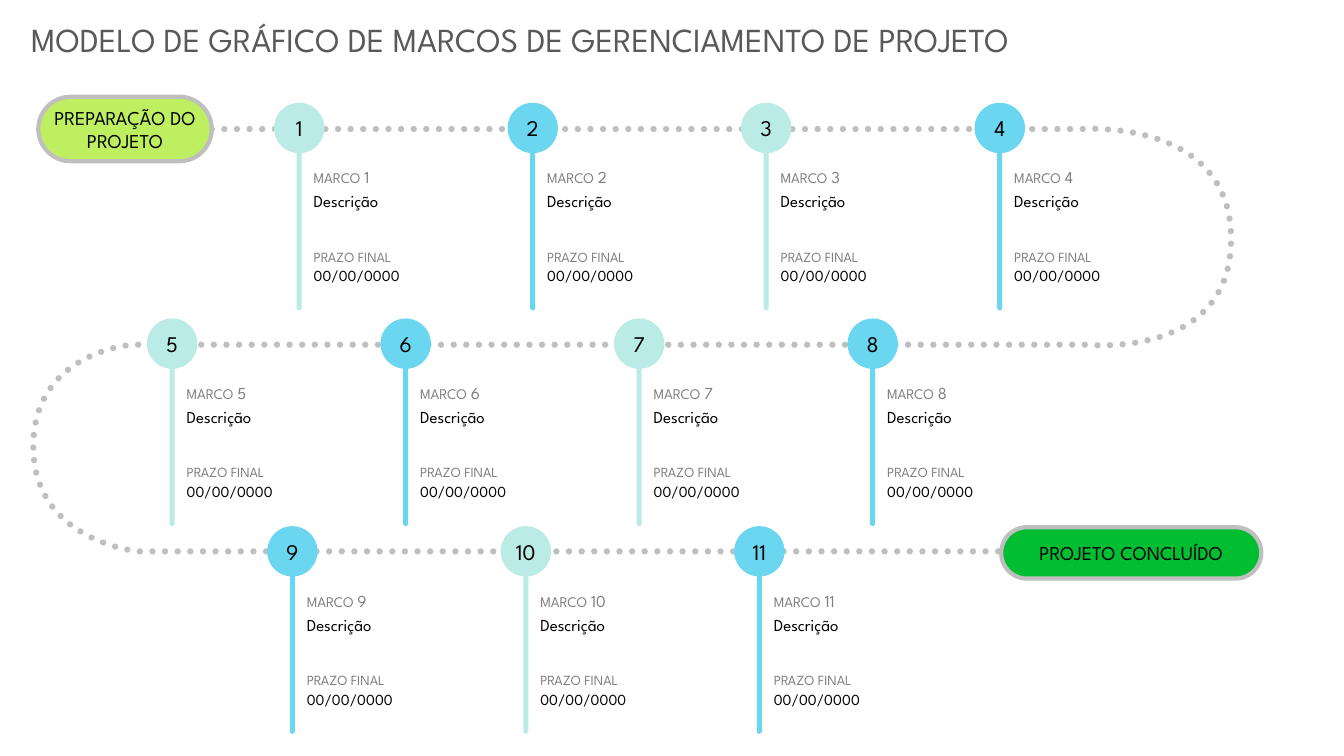
from dataclasses import dataclass

from lxml.etree import SubElement
from pptx import Presentation
from pptx.dml.color import RGBColor
from pptx.enum.dml import MSO_LINE
from pptx.enum.shapes import MSO_SHAPE
from pptx.enum.text import MSO_ANCHOR, MSO_AUTO_SIZE, PP_ALIGN
from pptx.oxml.ns import qn
from pptx.util import Inches, Pt


@dataclass(frozen=True)
class Theme:
    font: str = "League Spartan"
    title: str = "595959"
    label: str = "808080"
    text: str = "000000"
    road: str = "BFBFBF"
    mint: str = "BBEBE5"
    sky: str = "6BD6F0"
    start: str = "BEEF60"
    finish: str = "00BD32"
    title_size: float = 24
    number_size: float = 16
    pill_size: float = 14
    body_size: float = 12
    date_size: float = 11
    name_size: float = 10.5
    due_size: float = 10
    road_width: float = 4.5
    pill_width: float = 3


T = Theme()
WIDTH, HEIGHT = Inches(13.33), Inches(7.5)
COLS, ROWS = 1333, 750
PITCH = 231.6
CIRCLE = 50


def gx(col):
    return round(WIDTH * col / COLS)


def gy(row):
    return round(HEIGHT * row / ROWS)


def place(box):
    left, top, width, height = box
    return gx(left), gy(top), gx(width), gy(height)


def set_all(obj, values):
    for name, value in values.items():
        setattr(obj, name, value)


def write(tf, runs, align=PP_ALIGN.LEFT, inset=0, **frame):
    margins = dict.fromkeys(("margin_left", "margin_right", "margin_top", "margin_bottom"), inset)
    set_all(tf, {"word_wrap": True, **margins, **frame})
    p = tf.paragraphs[0]
    p.alignment = align
    for text, size, color in runs:
        r = p.add_run()
        r.text = text
        set_all(r.font, {"name": T.font, "size": Pt(size)})
        r.font.color.rgb = RGBColor.from_string(color)


def add_filled(shapes, kind, box, color):
    sp = shapes.add_shape(kind, *place(box))
    sp.shadow.inherit = False
    sp.fill.solid()
    sp.fill.fore_color.rgb = RGBColor.from_string(color)
    sp.line.fill.background()
    if kind == MSO_SHAPE.ROUNDED_RECTANGLE:
        sp.adjustments[0] = 0.5
    return sp


def set_line(sp, width):
    sp.line.color.rgb = RGBColor.from_string(T.road)
    sp.line.width = Pt(width)


def add_title(s, box, text):
    sp = s.shapes.title
    set_all(sp, dict(zip(("left", "top", "width", "height"), place(box))))
    tf = sp.text_frame
    write(tf, [(text, T.title_size, T.title)], vertical_anchor=MSO_ANCHOR.TOP,
          auto_size=MSO_AUTO_SIZE.SHAPE_TO_FIT_TEXT)
    set_all(tf, {"margin_left": Inches(0.1), "margin_right": Inches(0.1),
                 "margin_top": Inches(0.05), "margin_bottom": Inches(0.05)})


def bend(line_to, controls, left, top):
    line_to.tag = qn("a:cubicBezTo")
    for i, (col, row) in enumerate(controls):
        pt = SubElement(line_to, qn("a:pt"), x=str(gx(col) - left), y=str(gy(row) - top))
        line_to.insert(i, pt)


def add_road(s, box):
    x, y, w, h = box
    right, bottom = x + w, y + h
    middle = y + 214
    stops = [
        ((1073, y), []),
        ((right, y + 109), [(1073, y), (right, y - 11)]),
        ((1078, middle), [(right, y + 229), (1078, middle)]),
        ((131, middle), []),
        ((x, middle + 101), [(131, middle), (x, middle + 7)]),
        ((137, bottom), [(x, middle + 195), (137, bottom)]),
        ((1028, bottom), []),
    ]
    builder = s.shapes.build_freeform(gx(210), gy(y))
    builder.add_line_segments([(gx(a), gy(b)) for (a, b), controls in stops], close=False)
    sp = builder.convert_to_shape()
    lines = list(sp.element.iter(qn("a:lnTo")))
    for line_to, (stop, controls) in zip(lines, stops):
        if controls:
            bend(line_to, controls, sp.left, sp.top)
    sp.shadow.inherit = False
    sp.fill.background()
    set_line(sp, T.road_width)
    sp.line.dash_style = MSO_LINE.ROUND_DOT
    ln = sp.element.spPr.find(qn("a:ln"))
    ln.set("cap", "rnd")
    SubElement(ln, qn("a:round"))


def add_milestone(s, box, number, color):
    x, y, w, h = box
    shapes = s.shapes.add_group_shape().shapes
    add_filled(shapes, MSO_SHAPE.ROUNDED_RECTANGLE, (x + 22.4, y + 19, 5, h - 19), color)
    lines = [
        (63.6, 117, 26, [("MARCO", T.name_size, T.label), (" ", T.date_size, T.label),
                         (number, T.body_size, T.label)]),
        (87.4, 137, 57, [("Descrição", T.body_size, T.text)]),
        (144.3, 132, 20, [("PRAZO FINAL", T.due_size, T.label)]),
        (162.3, 90, 26, [("00/00/0000", T.date_size, T.text)]),
    ]
    for top, width, height, runs in lines:
        tb = shapes.add_textbox(*place((x + 39.3, y + top, width, height)))
        write(tb.text_frame, runs)
    sp = add_filled(shapes, MSO_SHAPE.OVAL, (x, y, CIRCLE, CIRCLE), color)
    write(sp.text_frame, [(number, T.number_size, T.text)], PP_ALIGN.CENTER,
          vertical_anchor=MSO_ANCHOR.MIDDLE)


def add_row(s, box, first, count, colors):
    x, y, w, h = box
    for i in range(count):
        add_milestone(s, (x + i * w, y, w, h), str(first + i), colors[i % 2])


def add_pill(s, box, text, color):
    sp = add_filled(s.shapes, MSO_SHAPE.ROUNDED_RECTANGLE, box, color)
    set_line(sp, T.pill_width)
    write(sp.text_frame, [(text, T.pill_size, T.text)], PP_ALIGN.CENTER,
          vertical_anchor=MSO_ANCHOR.MIDDLE)


def main():
    prs = Presentation()
    set_all(prs, {"slide_width": WIDTH, "slide_height": HEIGHT})
    s = prs.slides.add_slide(prs.slide_layouts[5])
    add_title(s, (21, 14, 1287, 50), "MODELO DE GRÁFICO DE MARCOS DE GERENCIAMENTO DE PROJETO")
    add_road(s, (33, 128, 1188, 419))
    rows = [
        (271.8, 102, 1, 4, (T.mint, T.sky)),
        (145.8, 316, 5, 4, (T.mint, T.sky)),
        (265, 522, 9, 3, (T.sky, T.mint)),
    ]
    for x, y, first, count, colors in rows:
        add_row(s, (x, y, PITCH, 206), first, count, colors)
    add_pill(s, (993, 523, 258, 51), "PROJETO CONCLUÍDO", T.finish)
    add_pill(s, (38, 96, 172, 64), "PREPARAÇÃO DO PROJETO", T.start)
    prs.save("out.pptx")


if __name__ == "__main__":
    main()
